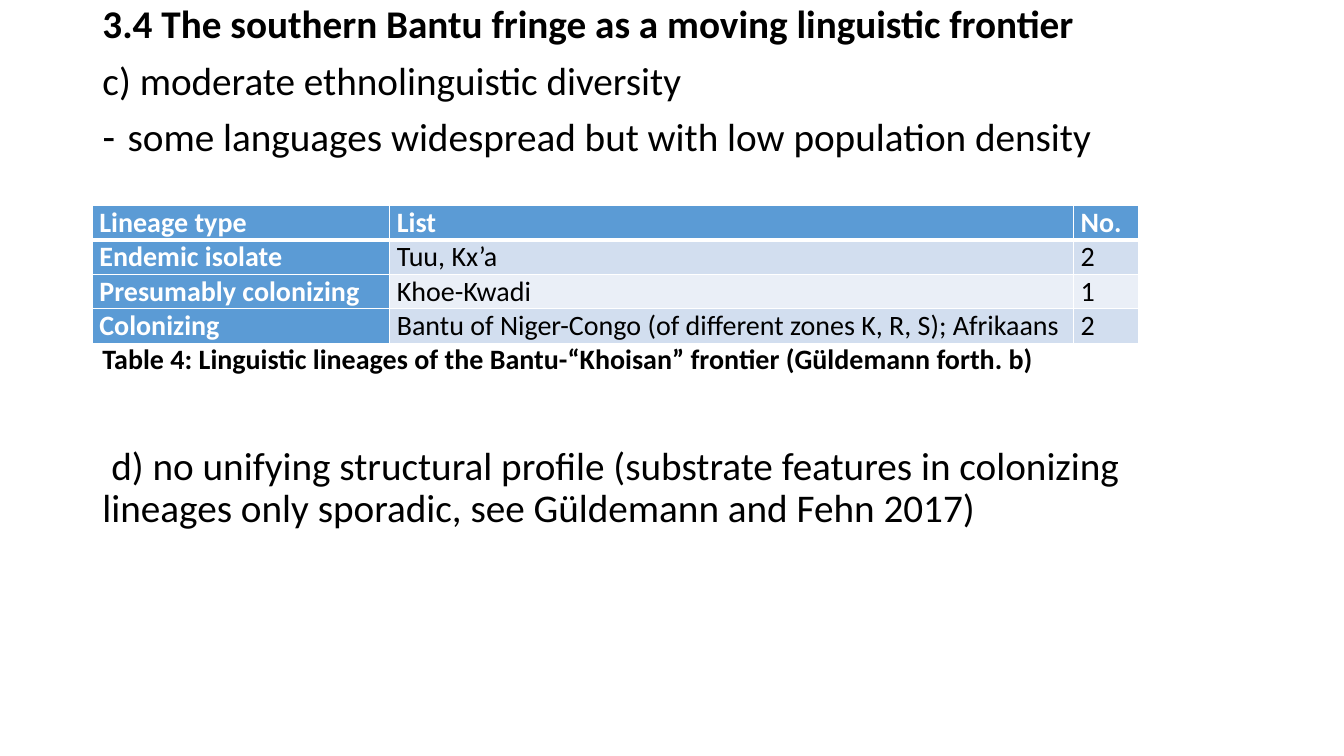
from lxml import etree
from pptx import Presentation
from pptx.dml.color import RGBColor
from pptx.enum import text
from pptx.oxml import ns
from pptx.util import Pt

BLACK = RGBColor(0, 0, 0)
WHITE = RGBColor(255, 255, 255)
BLUE = RGBColor(0x5B, 0x9B, 0xD5)
BANDS = RGBColor(0xD2, 0xDE, 0xEF), RGBColor(0xEA, 0xEF, 0xF7)

LINES = [
    ("3.4 The southern Bantu fringe as a moving linguistic frontier", dict(bold=True)),
    ("c) moderate ethnolinguistic diversity", {}),
    ("some languages widespread but with low population density", dict(bullet="-")),
    ("Table 4: Linguistic lineages of the Bantu-“Khoisan” frontier (Güldemann forth. b)",
     dict(size=20, bold=True, before=132)),
    (" d) no unifying structural profile (substrate features in colonizing "
     "lineages only sporadic, see Güldemann and Fehn 2017)", dict(before=51)),
]
ROWS = [
    ("Lineage type", "List", "No."),
    ("Endemic isolate", "Tuu, Kx’a", "2"),
    ("Presumably colonizing", "Khoe-Kwadi", "1"),
    ("Colonizing", "Bantu of Niger-Congo (of different zones K, R, S); Afrikaans", "2"),
]
WIDTHS = 212.5, 488.5, 46


def write(para, words, size=28, bold=False, color=BLACK):
    run = para.add_run()
    run.text = words
    run.font.name = "Calibri"
    run.font.size = Pt(size)
    run.font.bold = bold
    run.font.color.rgb = color


def indent(para, bullet=None):
    props = para._p.get_or_add_pPr()
    step = Pt(18) if bullet else 0
    props.set("marL", str(step))
    props.set("indent", str(-step))
    if bullet:
        etree.SubElement(props, ns.qn("a:buChar")).set("char", bullet)
    else:
        etree.SubElement(props, ns.qn("a:buNone"))


def edge(cell, side, width):
    props = cell._tc.get_or_add_tcPr()
    line = etree.SubElement(props, ns.qn("a:ln" + side), w=str(Pt(width)))
    fill = etree.SubElement(line, ns.qn("a:solidFill"))
    etree.SubElement(fill, ns.qn("a:srgbClr"), val=str(WHITE))


def add_body(slide, left, top, width, height):
    body = slide.placeholders[1]
    body.left, body.top, body.width, body.height = map(Pt, (left, top, width, height))
    frame = body.text_frame
    frame.word_wrap = True
    frame.auto_size = text.MSO_AUTO_SIZE.NONE
    frame.vertical_anchor = text.MSO_ANCHOR.TOP
    for i, (words, style) in enumerate(LINES):
        para = frame.add_paragraph() if i else frame.paragraphs[0]
        style = dict(style)
        para.line_spacing = 0.9
        para.space_before = Pt(style.pop("before", 10))
        indent(para, style.pop("bullet", None))
        write(para, words, **style)


def add_grid(slide, left, top, width, height):
    grid = slide.shapes.add_table(len(ROWS), len(WIDTHS), *map(Pt, (left, top, width, height))).table
    grid.first_col = True
    for col, size in zip(grid.columns, WIDTHS):
        col.width = Pt(size)
    for r, row in enumerate(ROWS):
        grid.rows[r].height = Pt(height / len(ROWS))
        for c, words in enumerate(row):
            cell = grid.cell(r, c)
            head = r == 0 or c == 0
            cell.margin_left = cell.margin_right = Pt(5)
            cell.margin_top = cell.margin_bottom = 0
            for side in "LRTB":
                edge(cell, side, 3 if (r, side) in ((0, "B"), (1, "T")) else 1)
            cell.fill.solid()
            cell.fill.fore_color.rgb = BLUE if head else BANDS[(r - 1) % 2]
            write(cell.text_frame.paragraphs[0], words, 20, head, WHITE if head else BLACK)


def main():
    deck = Presentation()
    deck.slide_width, deck.slide_height = Pt(960), Pt(540)
    slide = deck.slides.add_slide(deck.slide_layouts[1])
    title = slide.shapes.title._element
    title.getparent().remove(title)
    add_body(slide, 66, 0, 828, 487)
    add_grid(slide, 66, 147, sum(WIDTHS), 97)
    deck.save("out.pptx")


if __name__ == "__main__":
    main()
